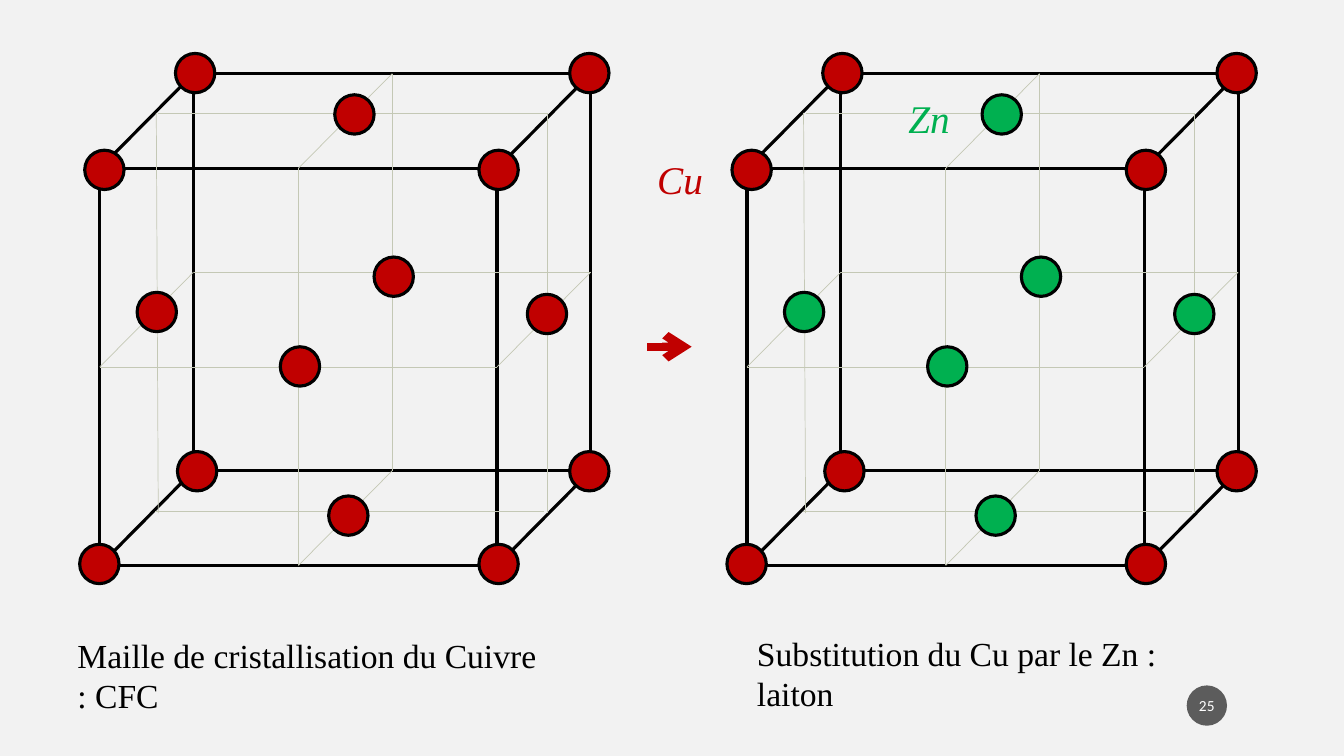
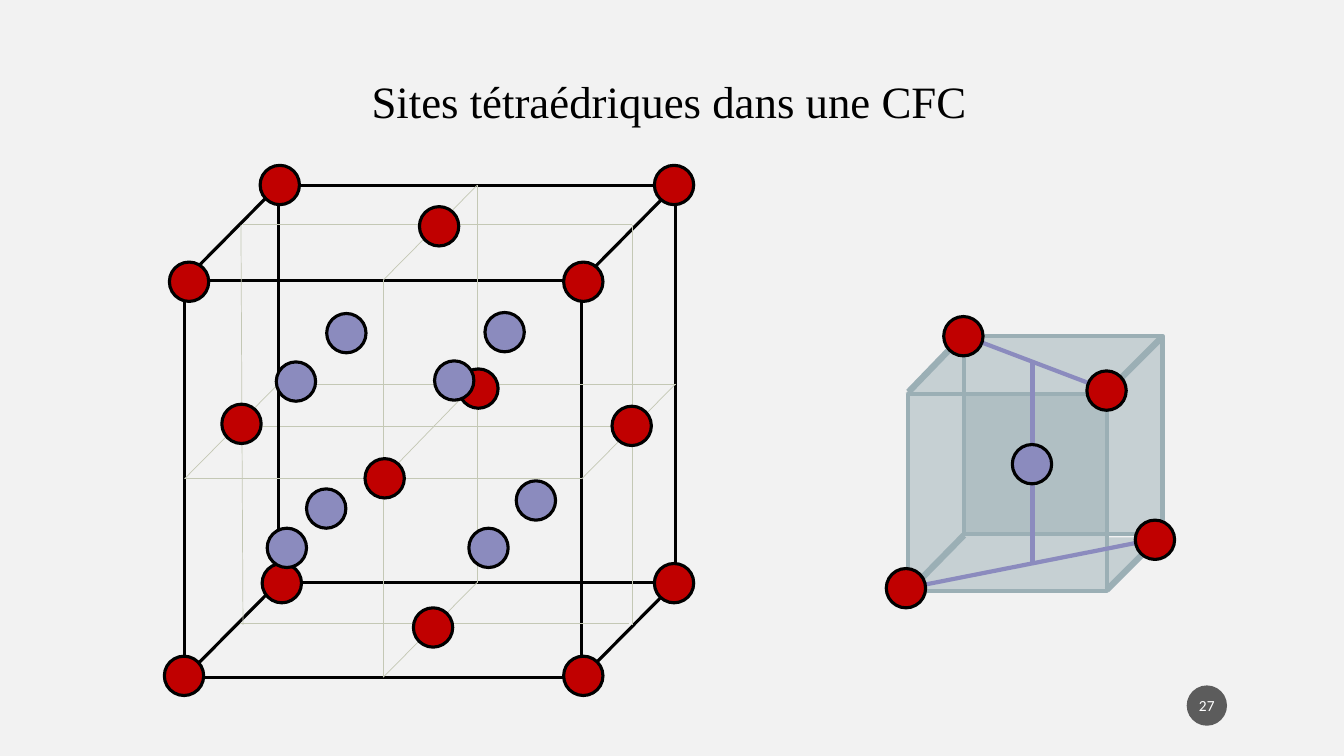
import pptx
import pptx.dml.color
import pptx.enum.shapes
import pptx.enum.text
import pptx.oxml.ns
import pptx.util
from lxml import etree

Inches = pptx.util.Inches
Pt = pptx.util.Pt
Shape = pptx.enum.shapes.MSO_SHAPE
Align = pptx.enum.text.PP_ALIGN
qn = pptx.oxml.ns.qn

BACKGROUND = "F2F2F2"
BLACK = "000000"
WHITE = "FFFFFF"
COPPER = "C00000"
ZINC = "00B050"
SITE = "8B8BBE"
GLASS = "9BAFB5"
GUIDE = "C4C8B5"
BADGE = "1D1D1D"
SERIF = "Times New Roman"

ATOM = 0.39
SIDE = 3.94
HALF = SIDE / 2
DEPTH_X = 0.93
DEPTH_Y = -0.94

CORNERS = [(-0.15, -0.18), (3.76, -0.18), (0.75, -1.14), (4.66, -1.14),
           (4.66, 2.81), (3.76, 3.73), (-0.2, 3.73), (0.77, 2.81)]
FACES = [(2.33, -0.73), (4.24, 1.25), (0.37, 1.23),
         (2.27, 3.25), (2.72, 0.88), (1.79, 1.77)]
MID_PLANES = [(0.58, -0.55, 4.44, -0.55), (0.55, 3.4, 4.41, 3.4),
              (4.44, 3.42, 4.44, -0.55), (0.56, -0.55, 0.58, 3.42)]
CENTRE_LINES = [(1.96, 1.98, 2.89, 1.02), (0.59, 1.45, 4.45, 1.45)]
TETRAHEDRAL_SITES = [(2.65, 5.24), (4.65, 5.24), (5.12, 4.77), (3.04, 4.85),
                     (2.74, 3.59), (3.24, 3.11), (4.31, 3.58), (4.81, 3.1)]


def rgb(colour):
    return pptx.dml.color.RGBColor.from_string(colour)


def add_outline(slide, kind, left, top, width, height, fill=None, opacity=100,
                line=None, weight=2.25, rotation=0):
    outline = slide.shapes.add_shape(kind, Inches(left), Inches(top),
                                     Inches(width), Inches(height))
    outline.shadow.inherit = False
    outline.rotation = rotation
    if fill:
        outline.fill.solid()
        outline.fill.fore_color.rgb = rgb(fill)
        if opacity < 100:
            solid = outline._element.spPr.find(qn("a:solidFill"))
            etree.SubElement(solid[0], qn("a:alpha"), val=str(opacity * 1000))
    else:
        outline.fill.background()
    if line:
        outline.line.color.rgb = rgb(line)
        outline.line.width = Pt(weight)
    else:
        outline.line.fill.background()
    return outline


def add_line(slide, x1, y1, x2, y2, colour=BLACK, weight=2.25, arrow=False):
    edge = slide.shapes.add_connector(
        pptx.enum.shapes.MSO_CONNECTOR.STRAIGHT,
        Inches(x1), Inches(y1), Inches(x2), Inches(y2))
    edge.line.color.rgb = rgb(colour)
    edge.line.width = Pt(weight)
    properties = edge._element.spPr
    if arrow:
        etree.SubElement(properties.find(qn("a:ln")), qn("a:tailEnd"), type="arrow")
    etree.SubElement(properties, qn("a:effectLst"))


def write_text(frame, text, size=24, colour=BLACK, font=SERIF, italic=False,
               align=Align.LEFT, wrap=True):
    frame.word_wrap = wrap
    paragraph = frame.paragraphs[0]
    paragraph.alignment = align
    run = paragraph.add_run()
    run.text = text
    run.font.size = Pt(size)
    run.font.name = font
    run.font.italic = italic
    run.font.color.rgb = rgb(colour)


def add_label(slide, left, top, width, height, text, **text_format):
    label = slide.shapes.add_textbox(Inches(left), Inches(top),
                                     Inches(width), Inches(height))
    label.text_frame.auto_size = pptx.enum.text.MSO_AUTO_SIZE.SHAPE_TO_FIT_TEXT
    write_text(label.text_frame, text, **text_format)


def add_atoms(slide, places, colour, left=0, top=0):
    for x, y in places:
        add_outline(slide, Shape.OVAL, left + x, top + y, ATOM, ATOM,
                    fill=colour, line=BLACK)


def add_guides(slide, guides, left, top):
    for x1, y1, x2, y2 in guides:
        add_line(slide, left + x1, top + y1, left + x2, top + y2, GUIDE, 0.5)


def add_cell(slide, left, top, face_colour=COPPER):
    for x, y in [(0, 0), (DEPTH_X, DEPTH_Y)]:
        add_outline(slide, Shape.RECTANGLE, left + x, top + y, SIDE, SIDE, line=BLACK)
    for x, y in [(0, 0), (SIDE, 0), (0, SIDE), (SIDE, SIDE)]:
        add_line(slide, left + x, top + y, left + x + DEPTH_X, top + y + DEPTH_Y)
    guides = []
    for x, y in [(0, 0), (DEPTH_X, DEPTH_Y)]:
        guides.append((x, y + HALF, x + SIDE, y + HALF))
        guides.append((x + HALF, y + SIDE, x + HALF, y))
    for x, y in [(0, HALF), (SIDE, HALF), (HALF, 0), (HALF, SIDE)]:
        guides.append((x, y, x + DEPTH_X, y + DEPTH_Y))
    add_guides(slide, guides + MID_PLANES, left, top)
    add_atoms(slide, CORNERS, COPPER, left, top)
    add_atoms(slide, FACES, face_colour, left, top)


def add_tetrahedral_cube(slide):
    for left, top, height in [(9.56, 3.33, 1.97), (9.01, 3.91, 1.95)]:
        add_outline(slide, Shape.RECTANGLE, left, top, 1.97, height,
                    fill=GLASS, opacity=50, line=GLASS, weight=3)
    for left, top, width, height, rotation in [(10.96, 5.35, 0.51, 0.47, 90),
                                               (8.98, 3.32, 0.58, 0.58, 270)]:
        add_outline(slide, Shape.RIGHT_TRIANGLE, left, top, width, height,
                    fill=GLASS, opacity=50, rotation=rotation)
    for edge in [(9.01, 3.89, 9.55, 3.33), (10.98, 3.89, 11.53, 3.34),
                 (10.98, 5.85, 11.5, 5.33), (9.04, 5.84, 9.56, 5.31)]:
        add_line(slide, *edge, GLASS, 4.5)
    for bond in [(9.56, 3.33, 10.98, 3.87), (8.97, 5.84, 11.45, 5.35),
                 (10.24, 3.6, 10.24, 5.59)]:
        add_line(slide, *bond, SITE, 3)
    add_atoms(slide, [(10.04, 4.41)], SITE)
    add_atoms(slide, [(9.36, 3.14), (10.78, 3.68), (11.26, 5.16), (8.79, 5.64)], COPPER)


def add_page_number(slide, number):
    badge = add_outline(slide, Shape.OVAL, 11.77, 6.8, 0.4, 0.4, fill=BADGE, opacity=70)
    frame = badge.text_frame
    frame.margin_left = frame.margin_right = Inches(0.02)
    frame.vertical_anchor = pptx.enum.text.MSO_ANCHOR.MIDDLE
    write_text(frame, number, size=11, colour=WHITE, font="Calibri", align=Align.CENTER)


def build_substitution(slide):
    add_cell(slide, 0.99, 1.67)
    add_cell(slide, 7.41, 1.67, face_colour=ZINC)
    add_label(slide, 0.67, 6.25, 4.76, 0.91, "Maille de cristallisation du Cuivre : CFC")
    add_label(slide, 7.41, 6.23, 4.76, 0.91, "Substitution du Cu par le Zn : laiton")
    add_label(slide, 8.91, 0.89, 0.62, 0.57, "Zn",
              size=28, colour=ZINC, italic=True, wrap=False)
    add_label(slide, 6.42, 1.49, 0.66, 0.57, "Cu",
              size=28, colour=COPPER, italic=True, wrap=False)
    add_line(slide, 6.42, 3.44, 6.86, 3.44, COPPER, 6, arrow=True)
    add_page_number(slide, "25")


def build_tetrahedral_sites(slide):
    left, top = 1.83, 2.78
    add_guides(slide, CENTRE_LINES, left, top)
    add_cell(slide, left, top)
    add_tetrahedral_cube(slide)
    add_label(slide, 2.51, 0.68, 8.37, 0.64, "Sites tétraédriques dans une CFC ",
              size=32, align=Align.CENTER)
    add_atoms(slide, TETRAHEDRAL_SITES, SITE)
    add_page_number(slide, "27")


def main():
    deck = pptx.Presentation()
    deck.slide_width = Inches(13.33)
    deck.slide_height = Inches(7.5)
    backdrop = deck.slide_master.background.fill
    backdrop.solid()
    backdrop.fore_color.rgb = rgb(BACKGROUND)
    for build in (build_substitution, build_tetrahedral_sites):
        build(deck.slides.add_slide(deck.slide_layouts[6]))
    deck.save("out.pptx")


if __name__ == "__main__":
    main()
